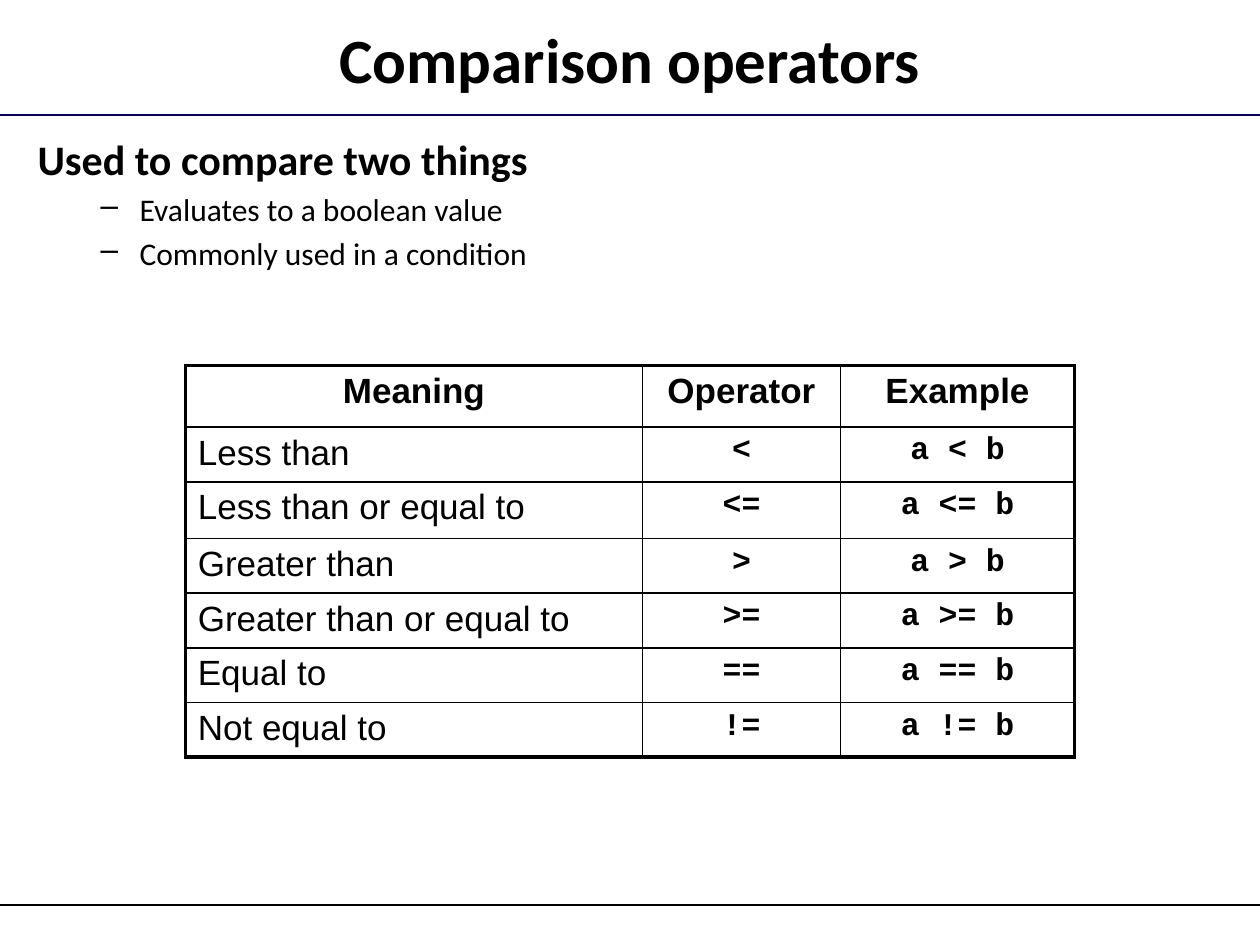
from lxml import etree
from pptx import Presentation
from pptx.dml.color import RGBColor
from pptx.enum import shapes, text
from pptx.oxml import ns
from pptx.util import Inches, Pt

BLACK = RGBColor(0, 0, 0)
NAVY = RGBColor(0, 0, 0x66)

TITLE = "Comparison operators"
LEAD = "Used to compare two things"
POINTS = ["Evaluates to a boolean value", "Commonly used in a condition"]
HEADS = ["Meaning", "Operator", "Example"]
RULES = [
    ("Less than", "<"),
    ("Less than or equal to", "<="),
    ("Greater than", ">"),
    ("Greater than or equal to", ">="),
    ("Equal to", "=="),
    ("Not equal to", "!="),
]
COLS = [3.63, 1.57, 1.86]
ROWS = [0.49, 0.41, 0.45] + [0.41] * 4
LINES = [(0.91, NAVY), (7.18, BLACK)]

HEAD = {"name": "Arial", "size": Pt(20), "bold": True}
WORD = {"name": "Arial", "size": Pt(20), "bold": False}
CODE = {"name": "Courier New", "size": Pt(18), "bold": True}
MAIN = {"name": "Calibri", "size": Pt(36), "bold": True}
TOP = {"name": "Calibri", "size": Pt(24), "bold": True}
SUB = {"name": "Calibri", "size": Pt(18), "bold": False}
LEFT, MID = text.PP_ALIGN.LEFT, text.PP_ALIGN.CENTER


def write(para, words, form, align=LEFT):
    para.alignment = align
    run = para.add_run()
    run.text = words
    for key, value in form.items():
        setattr(run.font, key, value)
    run.font.color.rgb = BLACK


def node(parent, tag, **attrs):
    return etree.SubElement(parent, ns.qn(tag), attrs)


def edge(cell, sides):
    props = cell._tc.get_or_add_tcPr()
    for side, width in sides.items():
        line = node(props, f"a:ln{side}", w=str(Pt(width)))
        node(node(line, "a:solidFill"), "a:srgbClr", val=str(BLACK))
    cell.fill.background()


def draw_lines(slide):
    for y, color in LINES:
        line = slide.shapes.add_connector(
            shapes.MSO_CONNECTOR.STRAIGHT, 0, Inches(y), Inches(10), Inches(y))
        line.line.color.rgb = color
        line.line.width = Pt(1)
        node(line._element.spPr, "a:effectLst")


def draw_title(slide):
    title = slide.shapes.title
    title.left, title.top, title.width, title.height = map(Inches, (0.1, 0.12, 9.8, 0.69))
    title.text_frame.vertical_anchor = text.MSO_ANCHOR.MIDDLE
    write(title.text_frame.paragraphs[0], TITLE, MAIN, MID)


def draw_points(slide):
    box = slide.shapes.add_textbox(*map(Inches, (0.2, 1.01, 9.6, 1.4)))
    frame = box.text_frame
    frame.word_wrap = True
    write(frame.paragraphs[0], LEAD, TOP)
    for point in POINTS:
        para = frame.add_paragraph()
        para.level = 1
        para.space_before = Pt(3.6)
        write(para, point, SUB)
        props = para._p.get_or_add_pPr()
        props.set("marL", str(Inches(0.81)))
        props.set("indent", str(Inches(-0.31)))
        node(props, "a:buChar", char="–")


def draw_table(slide):
    cells = [HEADS] + [(name, sign, f"a {sign} b") for name, sign in RULES]
    table = slide.shapes.add_table(
        len(ROWS), len(COLS), Inches(1.47), Inches(2.9),
        Inches(sum(COLS)), Inches(sum(ROWS))).table
    table.first_row = table.horz_banding = False
    for col, width in zip(table.columns, COLS):
        col.width = Inches(width)
    for row, height in zip(table.rows, ROWS):
        row.height = Inches(height)
    for r, row in enumerate(cells):
        for c, words in enumerate(row):
            cell = table.cell(r, c)
            form = HEAD if r == 0 else WORD if c == 0 else CODE
            write(cell.text_frame.paragraphs[0], words, form, LEFT if form is WORD else MID)
            outer = {"L": c == 0, "R": c == len(COLS) - 1,
                     "T": r == 0, "B": r == len(ROWS) - 1}
            edge(cell, {side: 2.25 if out else 1 for side, out in outer.items()})


def main():
    deck = Presentation()
    deck.slide_width, deck.slide_height = Inches(10), Inches(7.5)
    slide = deck.slides.add_slide(deck.slide_layouts[5])
    for draw in (draw_lines, draw_title, draw_points, draw_table):
        draw(slide)
    deck.save("out.pptx")


if __name__ == "__main__":
    main()
